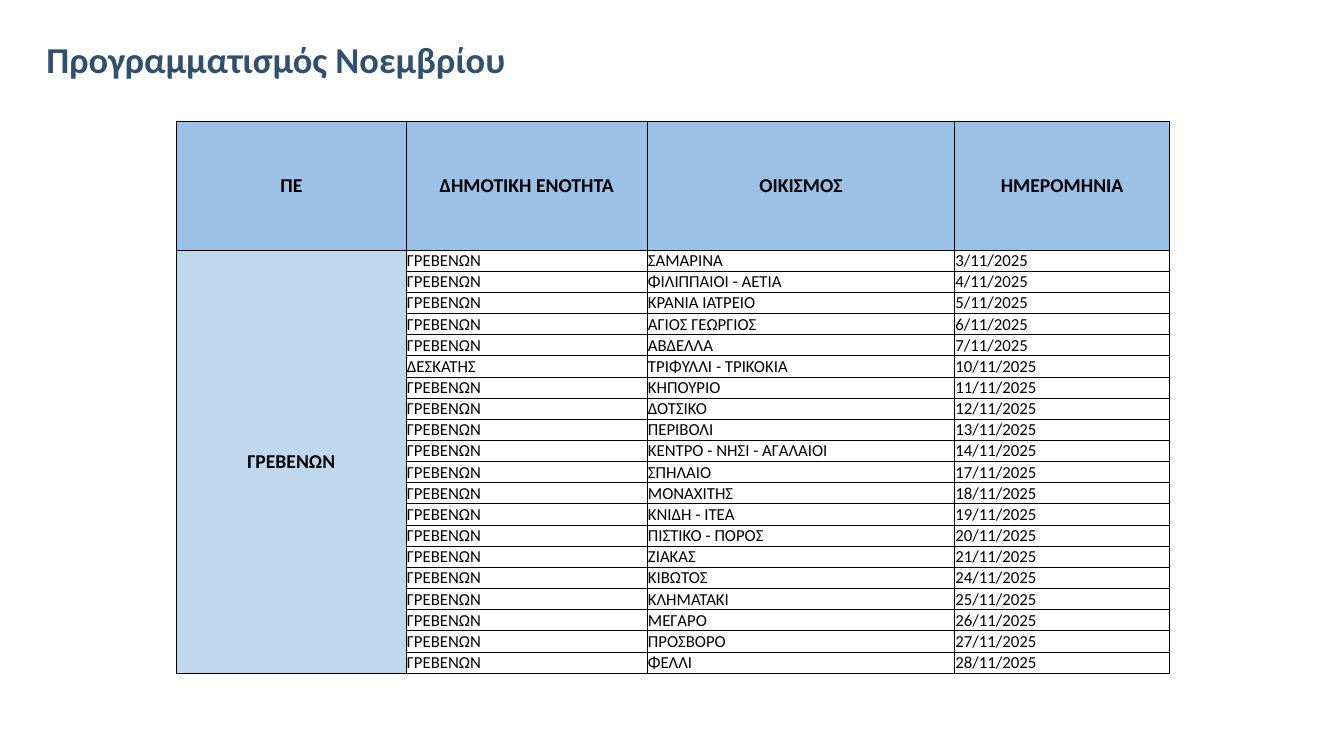
from dataclasses import dataclass

from lxml import etree
from pptx import Presentation
from pptx.dml.color import RGBColor
from pptx.enum.text import MSO_ANCHOR, PP_ALIGN
from pptx.oxml.ns import qn
from pptx.util import Inches, Pt

BOTTOM, MIDDLE = MSO_ANCHOR.BOTTOM, MSO_ANCHOR.MIDDLE
LEFT, CENTER = PP_ALIGN.LEFT, PP_ALIGN.CENTER
BORDER_SIDES = ("a:lnL", "a:lnR", "a:lnT", "a:lnB")


@dataclass(frozen=True)
class Theme:
    font: str = "Calibri"
    title_color: str = "31506D"
    ink: str = "000000"
    header_fill: str = "9BC2E6"
    region_fill: str = "C0D8ED"
    title_size: int = 26
    header_size: int = 14
    body_size: int = 12
    border: float = 0.5
    cell_inset: float = 0.5


class SlideBuilder:
    def __init__(self, slide, theme):
        self.slide = slide
        self.theme = theme

    def add_run(self, paragraph, text, size, color, bold):
        run = paragraph.add_run()
        run.text = text
        run.font.name = self.theme.font
        run.font.size = Pt(size)
        run.font.bold = bold
        run.font.color.rgb = RGBColor.from_string(color)

    def add_title(self, text, left, top, width, height):
        box = self.slide.shapes.add_textbox(
            Inches(left), Inches(top), Inches(width), Inches(height))
        frame = box.text_frame
        frame.word_wrap = True
        frame.vertical_anchor = BOTTOM
        frame.margin_left, frame.margin_right = Inches(0.12), Inches(0.1)
        frame.margin_top = frame.margin_bottom = Inches(0.05)
        paragraph = frame.paragraphs[0]
        paragraph.line_spacing = 0.9
        self.add_run(paragraph, text, self.theme.title_size,
                     self.theme.title_color, True)

    def add_table(self, left, top, column_widths, row_heights):
        table_frame = self.slide.shapes.add_table(
            len(row_heights), len(column_widths), Inches(left), Inches(top),
            Inches(sum(column_widths)), Inches(sum(row_heights)))
        table = table_frame.table
        table.first_row = table.horz_banding = False
        for column, width in zip(table.columns, column_widths):
            column.width = Inches(width)
        for row, height in zip(table.rows, row_heights):
            row.height = Inches(height)
        return table

    def style_cell(self, cell, fill=None):
        inset = Pt(self.theme.cell_inset)
        cell.margin_left = cell.margin_right = cell.margin_top = inset
        cell.margin_bottom = Inches(0)
        cell.vertical_anchor = MIDDLE
        # Borders come before the fill in the cell properties
        properties = cell._tc.get_or_add_tcPr()
        for side in BORDER_SIDES:
            line = etree.SubElement(properties, qn(side),
                                    w=str(Pt(self.theme.border)))
            solid = etree.SubElement(line, qn("a:solidFill"))
            etree.SubElement(solid, qn("a:srgbClr"), val=self.theme.ink)
        if fill:
            cell.fill.solid()
            cell.fill.fore_color.rgb = RGBColor.from_string(fill)
        else:
            cell.fill.background()

    def write_cell(self, cell, text, size, bold=False, align=LEFT):
        paragraph = cell.text_frame.paragraphs[0]
        paragraph.alignment = align
        self.add_run(paragraph, text, size, self.theme.ink, bold)


HEADERS = ("ΠΕ", "ΔΗΜΟΤΙΚΗ ΕΝΟΤΗΤΑ", "ΟΙΚΙΣΜΟΣ", "ΗΜΕΡΟΜΗΝΙΑ")
REGION = "ΓΡΕΒΕΝΩΝ"
OTHER_UNITS = {"ΤΡΙΦΥΛΛΙ - ΤΡΙΚΟΚΙΑ": "ΔΕΣΚΑΤΗΣ"}
SETTLEMENTS = (
    "ΣΑΜΑΡΙΝΑ", "ΦΙΛΙΠΠΑΙΟΙ - ΑΕΤΙΑ", "ΚΡΑΝΙΑ ΙΑΤΡΕΙΟ", "ΑΓΙΟΣ ΓΕΩΡΓΙΟΣ",
    "ΑΒΔΕΛΛΑ", "ΤΡΙΦΥΛΛΙ - ΤΡΙΚΟΚΙΑ", "ΚΗΠΟΥΡΙΟ", "ΔΟΤΣΙΚΟ", "ΠΕΡΙΒΟΛΙ",
    "ΚΕΝΤΡΟ - ΝΗΣΙ - ΑΓΑΛΑΙΟΙ", "ΣΠΗΛΑΙΟ", "ΜΟΝΑΧΙΤΗΣ", "ΚΝΙΔΗ - ΙΤΕΑ",
    "ΠΙΣΤΙΚΟ - ΠΟΡΟΣ", "ΖΙΑΚΑΣ", "ΚΙΒΩΤΟΣ", "ΚΛΗΜΑΤΑΚΙ", "ΜΕΓΑΡΟ",
    "ΠΡΟΣΒΟΡΟ", "ΦΕΛΛΙ",
)


def visit_date(index):
    """Weekdays only, from Monday 3 November."""
    week, weekday = divmod(index, 5)
    return f"{3 + 7 * week + weekday}/11/2025"


def main():
    presentation = Presentation()
    presentation.slide_width = Inches(13.33)
    presentation.slide_height = Inches(7.5)
    theme = Theme()
    builder = SlideBuilder(
        presentation.slides.add_slide(presentation.slide_layouts[6]), theme)

    # Title
    builder.add_title("Προγραμματισμός Νοεμβρίου", 0.34, 0.11, 12.4, 0.75)

    # Schedule grid
    schedule = builder.add_table(1.75, 1.2, (2.28, 2.39, 3.05, 2.13),
                                 [1.28] + [0.21] * len(SETTLEMENTS))

    # Header row
    for column, header in enumerate(HEADERS):
        cell = schedule.cell(0, column)
        builder.style_cell(cell, theme.header_fill)
        builder.write_cell(cell, header, theme.header_size, True, CENTER)

    # One row per visit
    for index, settlement in enumerate(SETTLEMENTS):
        row = index + 1
        builder.style_cell(schedule.cell(row, 0), theme.region_fill)
        visit = (OTHER_UNITS.get(settlement, REGION), settlement,
                 visit_date(index))
        for column, text in enumerate(visit, start=1):
            cell = schedule.cell(row, column)
            builder.style_cell(cell)
            builder.write_cell(cell, text, theme.body_size)

    # Region spanning every visit
    region = schedule.cell(1, 0)
    region.merge(schedule.cell(len(SETTLEMENTS), 0))
    builder.write_cell(region, REGION, theme.header_size, True, CENTER)

    presentation.save("out.pptx")


if __name__ == "__main__":
    main()
